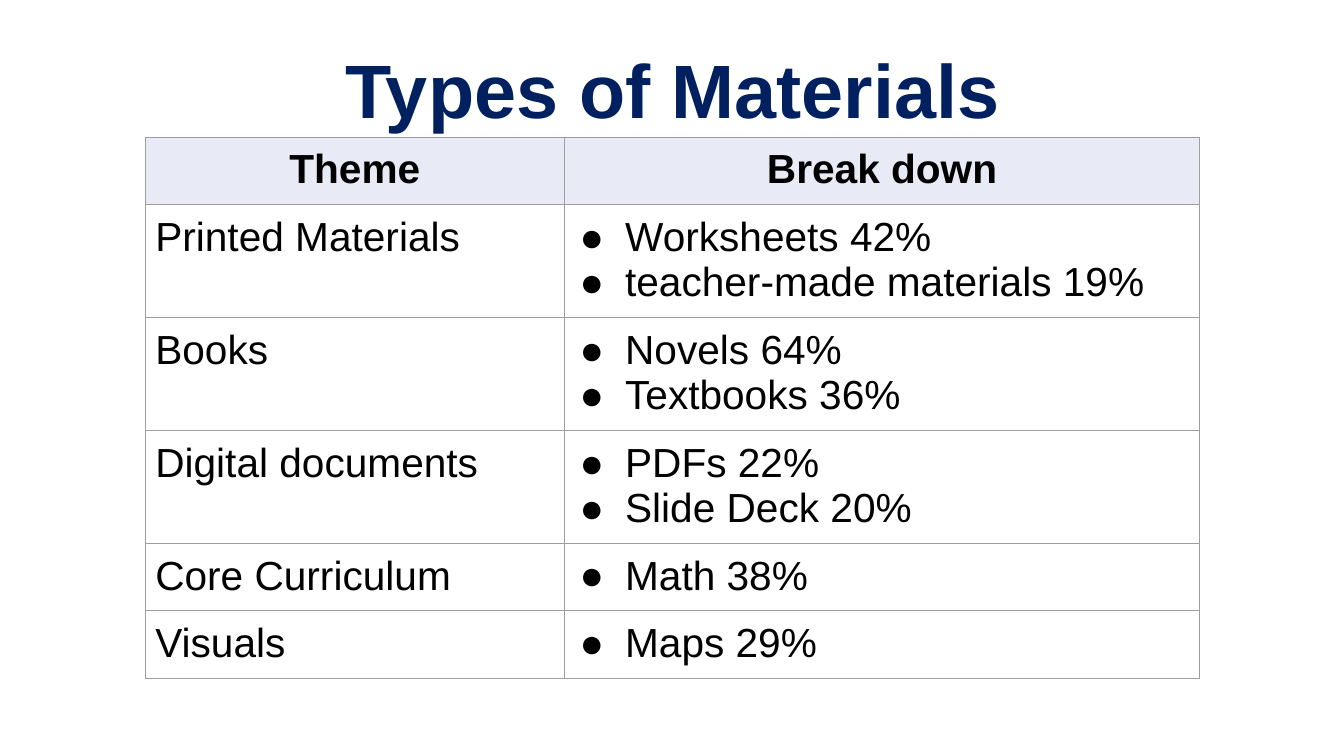
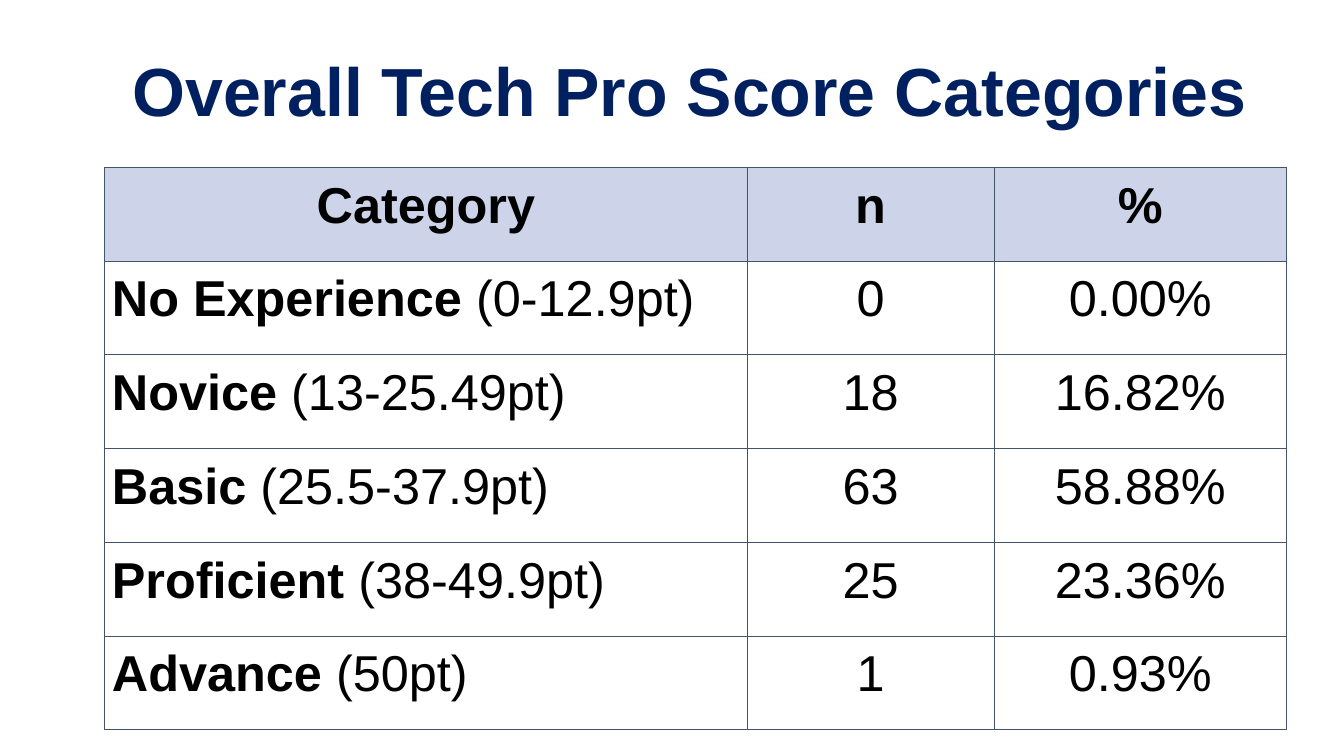
from lxml import etree
from pptx import Presentation
from pptx.dml.color import RGBColor
from pptx.enum.text import MSO_ANCHOR, MSO_AUTO_SIZE, PP_ALIGN
from pptx.oxml.ns import qn
from pptx.util import Inches, Pt

FONT = "Arial"
NAVY = RGBColor(0x00, 0x20, 0x60)
BLACK = RGBColor(0x00, 0x00, 0x00)
GREY = RGBColor(0x9E, 0x9E, 0x9E)
SLATE = RGBColor(0x44, 0x54, 0x6A)
PALE_BLUE = RGBColor(0xE8, 0xEB, 0xF5)
LIGHT_BLUE = RGBColor(0xCD, 0xD4, 0xEA)
LEFT, CENTER = PP_ALIGN.LEFT, PP_ALIGN.CENTER

MATERIALS = [
    ("Printed Materials", ["Worksheets 42%", "teacher-made materials 19%"]),
    ("Books", ["Novels 64%", "Textbooks 36%"]),
    ("Digital documents", ["PDFs 22%", "Slide Deck 20%"]),
    ("Core Curriculum", ["Math 38%"]),
    ("Visuals", ["Maps 29%"]),
]
SCORES = [
    ("No Experience", "(0-12.9pt)", "0", "0.00%"),
    ("Novice", "(13-25.49pt)", "18", "16.82%"),
    ("Basic", "(25.5-37.9pt)", "63", "58.88%"),
    ("Proficient", "(38-49.9pt)", "25", "23.36%"),
    ("Advance", "(50pt)", "1", "0.93%"),
]


def write_text(frame, lines, size, color=BLACK, bold=False, align=LEFT, lead="", bullet=""):
    """Write one paragraph per line, each after an optional bold lead or bullet."""
    for index, line in enumerate(lines):
        paragraph = frame.add_paragraph() if index else frame.paragraphs[0]
        paragraph.alignment = align
        if bullet:
            properties = paragraph._p.get_or_add_pPr()
            properties.set("marL", str(Inches(0.5)))
            properties.set("indent", str(Inches(-0.45)))
            bullet_color = etree.SubElement(properties, qn("a:buClr"))
            etree.SubElement(bullet_color, qn("a:srgbClr"), val=str(color))
            etree.SubElement(properties, qn("a:buFont"), typeface=FONT)
            etree.SubElement(properties, qn("a:buChar"), char=bullet)
        parts = [(lead + " ", True), (line, bold)] if lead else [(line, bold)]
        for text, is_bold in parts:
            run = paragraph.add_run()
            run.text = text
            run.font.name = FONT
            run.font.size = Pt(size)
            run.font.bold = is_bold
            run.font.color.rgb = color


def add_table_slide(title, title_width, title_size, left, top, widths, heights,
                    headers, header_size, header_fill, border, side_margin):
    """Add a titled slide with a bordered table and return the table."""
    slide = presentation.slides.add_slide(presentation.slide_layouts[5])
    heading = slide.shapes.title
    heading.left, heading.top = Inches(0.92), Inches(0.21)
    heading.width, heading.height = Inches(title_width), Inches(1.45)
    frame = heading.text_frame
    frame.word_wrap = True
    frame.auto_size = MSO_AUTO_SIZE.NONE
    frame.vertical_anchor = MSO_ANCHOR.MIDDLE
    write_text(frame, [title], title_size, color=NAVY, bold=True, align=CENTER)
    frame.paragraphs[0].line_spacing = 0.9

    table = slide.shapes.add_table(
        len(heights), len(widths), Inches(left), Inches(top),
        Inches(sum(widths)), Inches(sum(heights))).table
    table.horz_banding = False
    for column, width in zip(table.columns, widths):
        column.width = Inches(width)
    for row, height in zip(table.rows, heights):
        row.height = Inches(height)
    for cell in table.iter_cells():
        cell.margin_left = cell.margin_right = Inches(side_margin)
        cell.margin_top = cell.margin_bottom = Inches(0.1)
        cell.fill.background()
        for position, side in enumerate(("lnL", "lnR", "lnT", "lnB")):
            line = etree.Element(qn("a:" + side), w=str(Pt(0.75)))
            fill = etree.SubElement(line, qn("a:solidFill"))
            etree.SubElement(fill, qn("a:srgbClr"), val=str(border))
            cell._tc.get_or_add_tcPr().insert(position, line)
    for column, header in enumerate(headers):
        cell = table.cell(0, column)
        cell.fill.solid()
        cell.fill.fore_color.rgb = header_fill
        write_text(cell.text_frame, [header], header_size, bold=True, align=CENTER)
    return table


presentation = Presentation()
presentation.slide_width = Inches(13.33)
presentation.slide_height = Inches(7.5)

# Types of materials
table = add_table_slide(
    "Types of Materials", title_width=11.5, title_size=54, left=1.44, top=1.36,
    widths=[4.16, 6.3], heights=[0.67, 1.12, 1.12, 1.12, 0.67, 0.67],
    headers=["Theme", "Break down"], header_size=29, header_fill=PALE_BLUE,
    border=GREY, side_margin=0.1)
for row, (theme, items) in enumerate(MATERIALS, start=1):
    write_text(table.cell(row, 0).text_frame, [theme], 29)
    write_text(table.cell(row, 1).text_frame, items, 29, bullet="●")

# Score categories
table = add_table_slide(
    "Overall Tech Pro Score Categories", title_width=11.84, title_size=48.6,
    left=1.04, top=1.66, widths=[6.37, 2.45, 2.9], heights=[0.93] * 6,
    headers=["Category", "n", "%"], header_size=36, header_fill=LIGHT_BLUE,
    border=SLATE, side_margin=0.07)
for row, (category, points, count, percent) in enumerate(SCORES, start=1):
    write_text(table.cell(row, 0).text_frame, [points], 36, lead=category)
    write_text(table.cell(row, 1).text_frame, [count], 36, align=CENTER)
    write_text(table.cell(row, 2).text_frame, [percent], 36, align=CENTER)

presentation.save("out.pptx")
